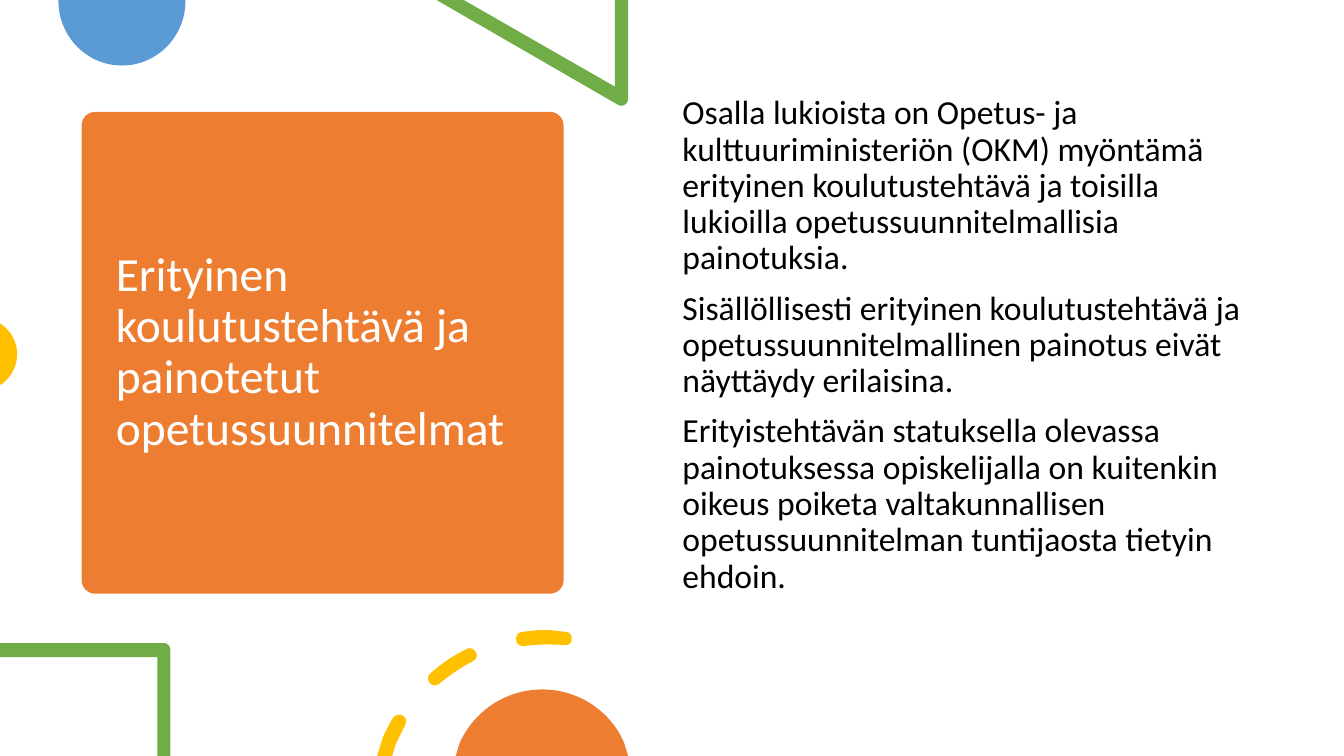
from lxml.etree import SubElement
from pptx import Presentation
from pptx.dml.color import RGBColor
from pptx.enum.shapes import MSO_SHAPE as Shape
from pptx.enum.text import MSO_ANCHOR as Anchor
from pptx.enum.text import PP_ALIGN as Align
from pptx.oxml.ns import qn
from pptx.util import Inches, Pt

ORANGE = RGBColor(0xED, 0x7D, 0x31)
BLUE = RGBColor(0x5B, 0x9B, 0xD5)
GREEN = RGBColor(0x70, 0xAD, 0x47)
YELLOW = RGBColor(0xFF, 0xC0, 0x00)
WHITE = RGBColor(0xFF, 0xFF, 0xFF)
BLACK = RGBColor(0x00, 0x00, 0x00)

TITLE = "Erityinen koulutustehtävä ja painotetut opetussuunnitelmat"
BODY = [
    "Osalla lukioista on Opetus- ja kulttuuriministeriön (OKM) myöntämä erityinen "
    "koulutustehtävä ja toisilla lukioilla opetussuunnitelmallisia painotuksia.",
    "Sisällöllisesti erityinen koulutustehtävä ja opetussuunnitelmallinen painotus "
    "eivät näyttäydy erilaisina. ",
    "Erityistehtävän statuksella olevassa painotuksessa opiskelijalla on kuitenkin "
    "oikeus poiketa valtakunnallisen opetussuunnitelman tuntijaosta tietyin ehdoin.",
]

BLUE_DISC = [(1.84, 0), (0.58, 0), (0.58, 0.01),
             (0.58, 0.36, 0.86, 0.65, 1.21, 0.65),
             (1.56, 0.65, 1.84, 0.36, 1.84, 0.01)]
GREEN_TRIANGLE = [(6.23, 0), (6.1, 0), (6.1, 0.86), (4.6, 0), (4.33, 0), (6.13, 1.04),
                  (6.14, 1.05, 6.15, 1.05, 6.16, 1.05),
                  (6.2, 1.05, 6.23, 1.02, 6.23, 0.98)]
YELLOW_DISC = [(0, 3.21), (0, 3.82), (0.02, 3.81),
               (0.11, 3.74, 0.17, 3.64, 0.17, 3.51),
               (0.17, 3.39, 0.11, 3.29, 0.02, 3.22)]
GREEN_FRAME = [(1.63, 6.38), (0, 6.38), (0, 6.52), (1.56, 6.52), (1.56, 7.5),
               (1.69, 7.5), (1.69, 6.45), (1.69, 6.41, 1.66, 6.38, 1.63, 6.38)]
LOWER_DASH = [(3.97, 7.09), (3.94, 7.08, 3.92, 7.1, 3.9, 7.12),
              (3.86, 7.18, 3.83, 7.25, 3.8, 7.31), (3.74, 7.5), (3.89, 7.5),
              (3.93, 7.37), (3.96, 7.31, 3.99, 7.25, 4.02, 7.19),
              (4.04, 7.16, 4.03, 7.11, 3.99, 7.1),
              (3.99, 7.09, 3.98, 7.09, 3.97, 7.09)]
MIDDLE_DASH = [(4.65, 6.43), (4.65, 6.43, 4.64, 6.43, 4.63, 6.44),
               (4.5, 6.5, 4.38, 6.58, 4.27, 6.68),
               (4.24, 6.7, 4.24, 6.75, 4.26, 6.77),
               (4.27, 6.79, 4.29, 6.8, 4.31, 6.8), (4.31, 6.8),
               (4.33, 6.8, 4.35, 6.79, 4.36, 6.78),
               (4.46, 6.7, 4.57, 6.62, 4.69, 6.56),
               (4.73, 6.54, 4.74, 6.5, 4.72, 6.47),
               (4.71, 6.44, 4.68, 6.43, 4.65, 6.43)]
UPPER_DASH = [(5.4, 6.25), (5.32, 6.25, 5.25, 6.26, 5.18, 6.27),
              (5.14, 6.27, 5.11, 6.31, 5.12, 6.35),
              (5.12, 6.38, 5.15, 6.41, 5.19, 6.41),
              (5.19, 6.41, 5.19, 6.41, 5.2, 6.41),
              (5.33, 6.39, 5.46, 6.39, 5.6, 6.4),
              (5.63, 6.41, 5.67, 6.38, 5.67, 6.35),
              (5.68, 6.31, 5.65, 6.27, 5.62, 6.27),
              (5.62, 6.27, 5.61, 6.27, 5.61, 6.27),
              (5.54, 6.26, 5.47, 6.25, 5.4, 6.25)]
ORANGE_DISC = [(5.38, 6.84), (5.01, 6.84, 4.7, 7.06, 4.56, 7.37), (4.52, 7.5),
               (6.23, 7.5), (6.19, 7.37), (6.06, 7.06, 5.74, 6.84, 5.38, 6.84)]


def bend(shape, outlines):
    """Turn the lines that stand for six-number pieces into cubic curves."""
    pieces = [piece for outline in outlines for piece in outline[1:]]
    lines = list(shape.element.iter(qn("a:lnTo")))
    for line, piece in zip(lines, pieces):
        if len(piece) == 2:
            continue
        curve = SubElement(line.getparent(), qn("a:cubicBezTo"))
        line.getparent().replace(line, curve)
        for x, y in zip(piece[::2], piece[1::2]):
            SubElement(curve, qn("a:pt"), x=str(Inches(x) - shape.left),
                       y=str(Inches(y) - shape.top))


def write_text(box, paragraphs, *, size, color, font, anchor=Anchor.TOP, before=0):
    """Fill a box with paragraphs in one format."""
    frame = box.text_frame
    frame.word_wrap = True
    frame.vertical_anchor = anchor
    for index, text in enumerate(paragraphs):
        para = frame.add_paragraph() if index else frame.paragraphs[0]
        para.alignment = Align.LEFT
        para.line_spacing = 0.9
        para.space_before = Pt(before)
        span = para.add_run()
        span.text = text
        span.font.name = font
        span.font.size = Pt(size)
        span.font.color.rgb = color


class SlideArtist:
    """Hold the style and the current slide."""

    font = "Calibri"

    def __init__(self, page):
        """Take the slide to draw on."""
        self.page = page

    def paint(self, shape, color):
        """Give a shape a plain fill."""
        shape.shadow.inherit = False
        shape.fill.solid()
        shape.fill.fore_color.rgb = color
        shape.line.fill.background()

    def panel(self, left, top, width, height, color, rounding):
        """Add a rounded panel."""
        panel = self.page.shapes.add_shape(
            Shape.ROUNDED_RECTANGLE, Inches(left), Inches(top), Inches(width), Inches(height))
        panel.adjustments[0] = rounding
        self.paint(panel, color)

    def ornament(self, color, *outlines):
        """Add one free shape made of closed outlines."""
        contours = [[(Inches(piece[-2]), Inches(piece[-1])) for piece in outline]
                    for outline in outlines]
        builder = self.page.shapes.build_freeform(*contours[0][0])
        for index, points in enumerate(contours):
            if index:
                builder.move_to(*points[0])
            builder.add_line_segments(points[1:], close=True)
        shape = builder.convert_to_shape()
        bend(shape, outlines)
        self.paint(shape, color)

    def text(self, left, top, width, height, paragraphs, **style):
        """Add a text box."""
        box = self.page.shapes.add_textbox(
            Inches(left), Inches(top), Inches(width), Inches(height))
        write_text(box, paragraphs, font=self.font, **style)


def main():
    """Build and save the slide."""
    deck = Presentation()
    deck.slide_width = Inches(13.33)
    deck.slide_height = Inches(7.5)
    artist = SlideArtist(deck.slides.add_slide(deck.slide_layouts[6]))
    artist.panel(0.81, 1.11, 4.78, 4.78, ORANGE, rounding=0.028)
    artist.text(1.05, 1.22, 4.31, 4.56, [TITLE], size=34, color=WHITE, anchor=Anchor.MIDDLE)
    artist.ornament(BLUE, BLUE_DISC)
    artist.ornament(GREEN, GREEN_TRIANGLE)
    artist.ornament(YELLOW, YELLOW_DISC)
    artist.text(6.67, 0.9, 5.75, 5.35, BODY, size=24, color=BLACK, before=10)
    artist.ornament(GREEN, GREEN_FRAME)
    artist.ornament(YELLOW, LOWER_DASH, MIDDLE_DASH, UPPER_DASH)
    artist.ornament(ORANGE, ORANGE_DISC)
    deck.save("out.pptx")


if __name__ == "__main__":
    main()
